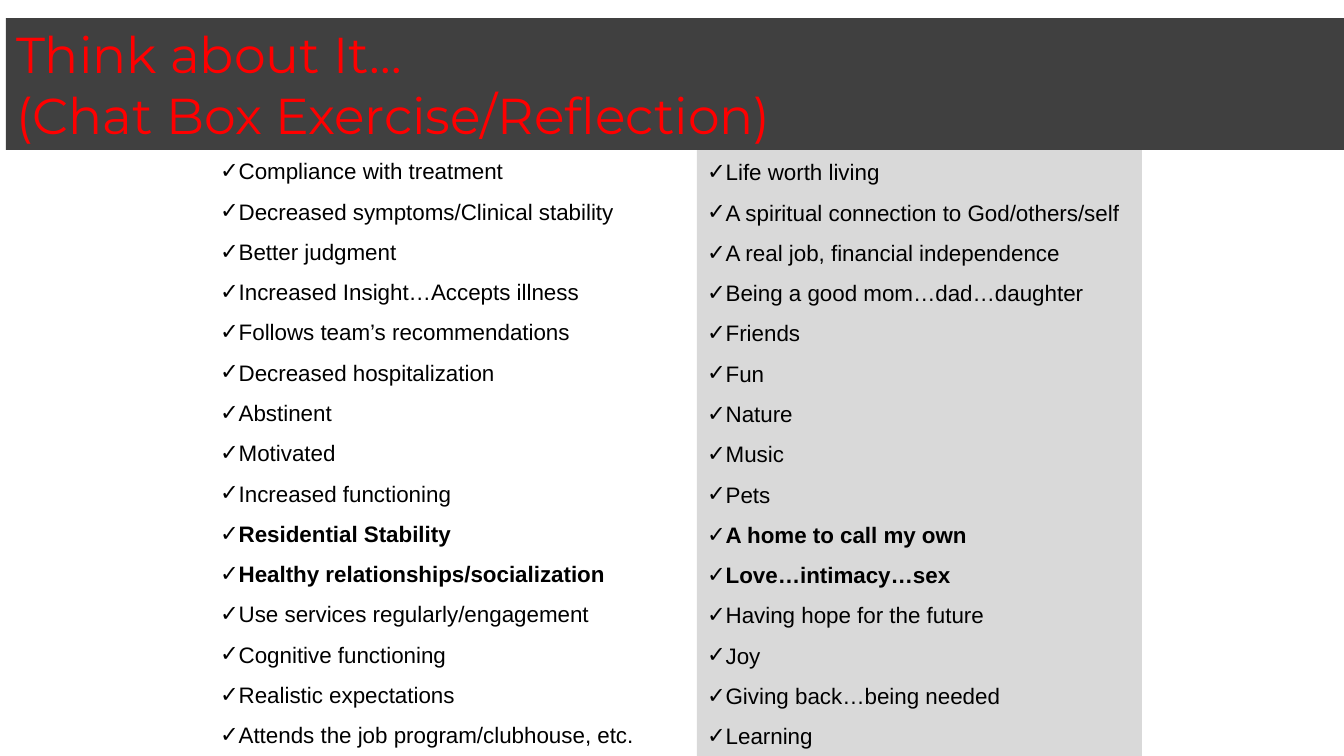
from lxml.etree import SubElement
from pptx import Presentation
from pptx.dml.color import RGBColor
from pptx.enum.text import MSO_ANCHOR, MSO_AUTO_SIZE, PP_ALIGN
from pptx.oxml.ns import qn
from pptx.util import Pt

PX = 914400 / 100.8

GOALS = [
    "Compliance with treatment",
    "Decreased symptoms/Clinical stability",
    "Better judgment",
    "Increased Insight…Accepts illness",
    "Follows team’s recommendations",
    "Decreased hospitalization",
    "Abstinent",
    "Motivated",
    "Increased functioning",
    "Residential Stability",
    "Healthy relationships/socialization",
    "Use services regularly/engagement",
    "Cognitive functioning",
    "Realistic expectations",
    "Attends the job program/clubhouse, etc.",
]
HOPES = [
    "Life worth living",
    "A spiritual connection to God/others/self",
    "A real job, financial independence",
    "Being a good mom…dad…daughter",
    "Friends",
    "Fun",
    "Nature",
    "Music",
    "Pets",
    "A home to call my own",
    "Love…intimacy…sex",
    "Having hope for the future",
    "Joy",
    "Giving back…being needed",
    "Learning",
]
BOLD = {GOALS[9], GOALS[10], HOPES[9], HOPES[10]}


def color(code):
    return RGBColor.from_string(code)


def fill_box(box, rect, fill, anchor, lines, font, size, ink):
    """Place a placeholder, paint it and write one paragraph per line."""
    box.left, box.top, box.width, box.height = [round(n * PX) for n in rect]
    box.fill.solid()
    box.fill.fore_color.rgb = color(fill)
    frame = box.text_frame
    frame.word_wrap = True
    frame.auto_size = MSO_AUTO_SIZE.NONE
    frame.vertical_anchor = anchor
    for i, line in enumerate(lines):
        para = frame.add_paragraph() if i else frame.paragraphs[0]
        para.alignment = PP_ALIGN.LEFT
        para.space_before = Pt(0)
        run = para.add_run()
        run.text = line
        run.font.name = font
        run.font.size = Pt(size)
        run.font.bold = line in BOLD
        run.font.color.rgb = color(ink)


deck = Presentation()
deck.slide_width, deck.slide_height = round(1344 * PX), round(756 * PX)
slide = deck.slides.add_slide(deck.slide_layouts[3])
title, left, right = slide.placeholders

columns = [
    (left, (210, 139, 436, 617), "FFFFFF", GOALS),
    (right, (697, 140, 445, 617), "D9D9D9", HOPES),
]
for box, rect, fill, lines in columns:
    fill_box(box, rect, fill, MSO_ANCHOR.TOP, lines, "Arial", 16, "000000")
    for para in box.text_frame.paragraphs:
        para.line_spacing = 1.5
        props = para._p.get_or_add_pPr()
        props.set("marL", str(round(18 * PX)))
        props.set("indent", str(round(-18 * PX)))
        SubElement(props, qn("a:buFont")).set("typeface", "Arial")
        SubElement(props, qn("a:buChar")).set("char", "✓")

fill_box(title, (6, 18, 1344, 132), "404040", MSO_ANCHOR.MIDDLE,
         ["Think about It…", "(Chat Box Exercise/Reflection)"],
         "Montserrat", 36, "FF0000")
# The title band overlaps the top of both columns
right.element.addnext(title.element)

deck.save("out.pptx")
